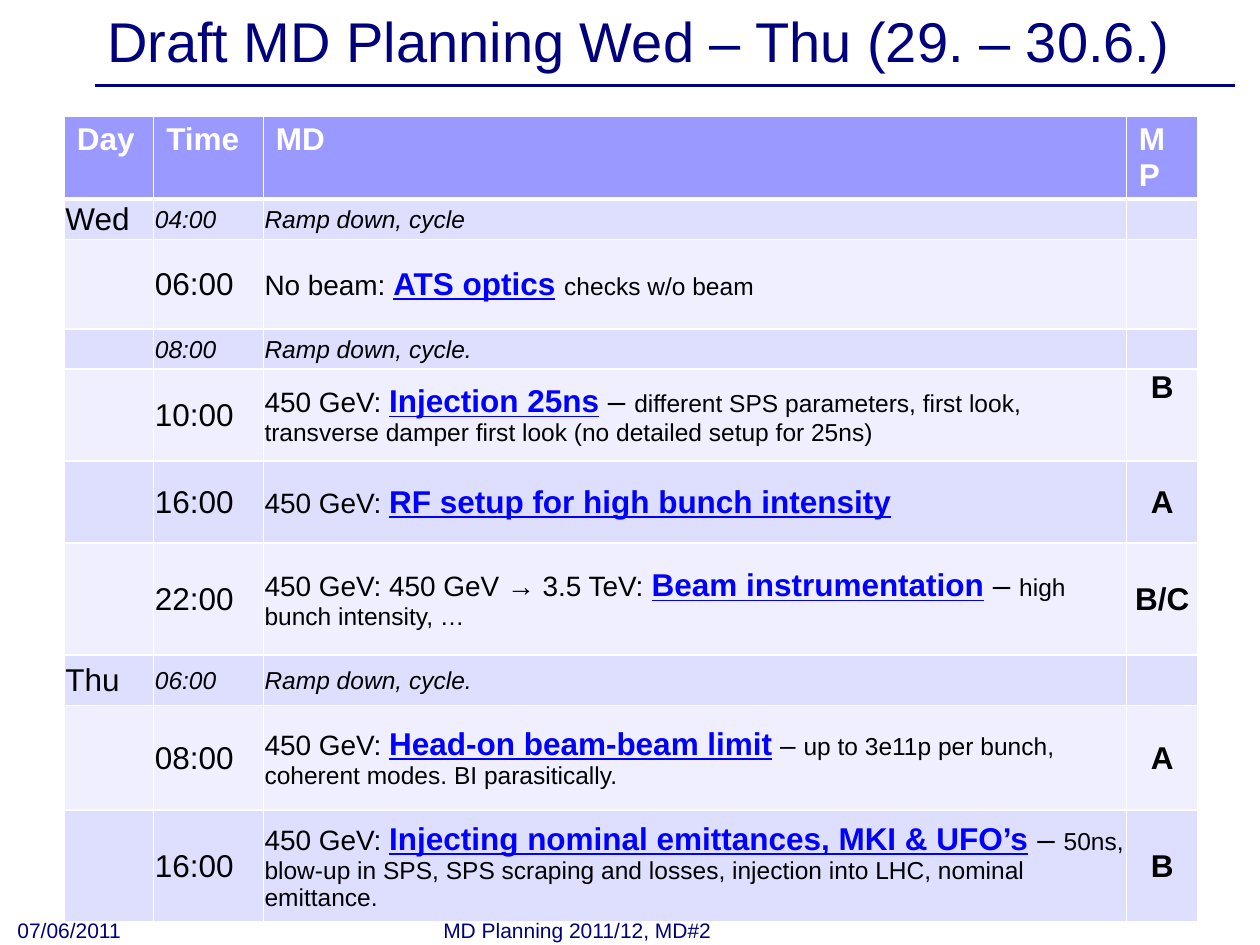
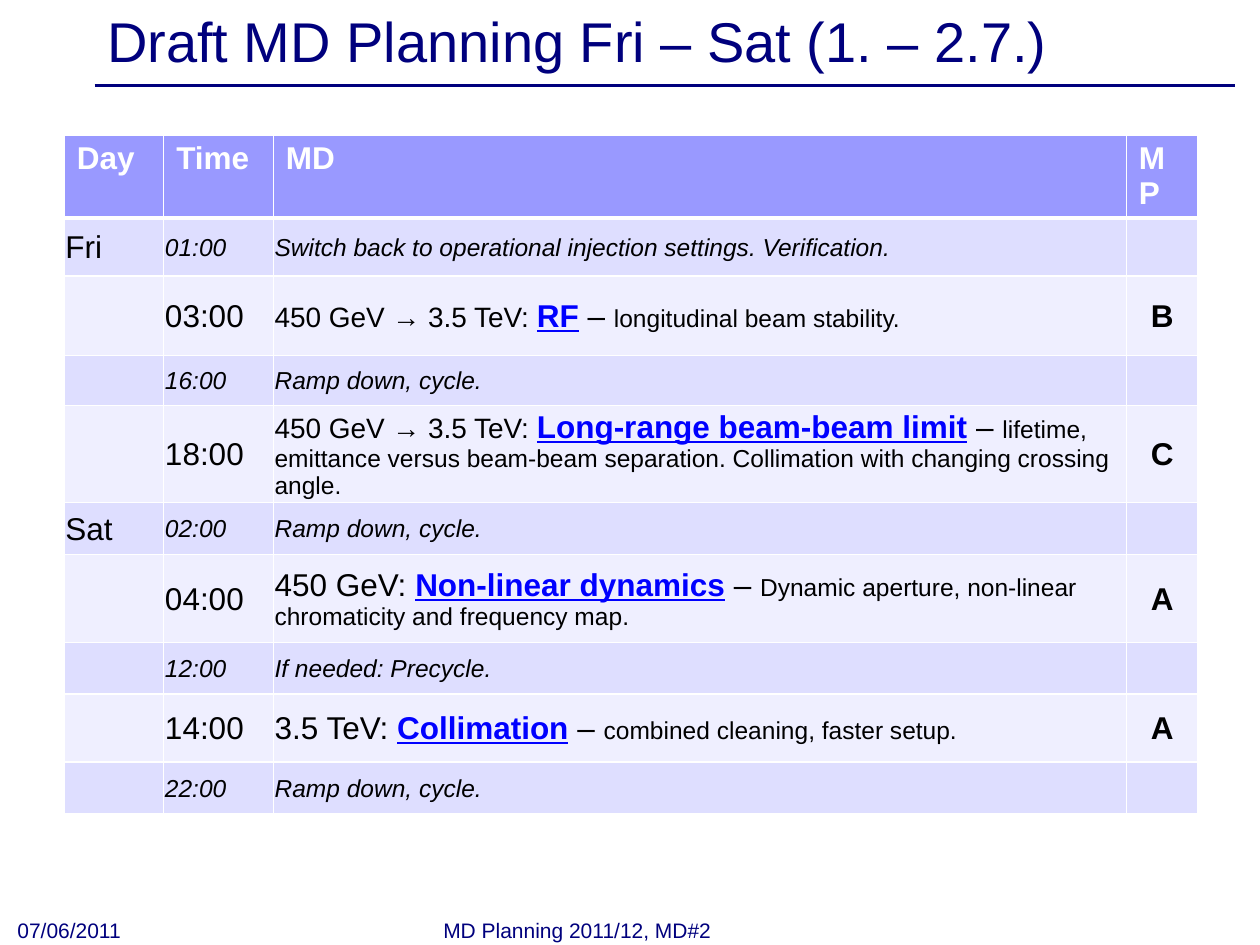
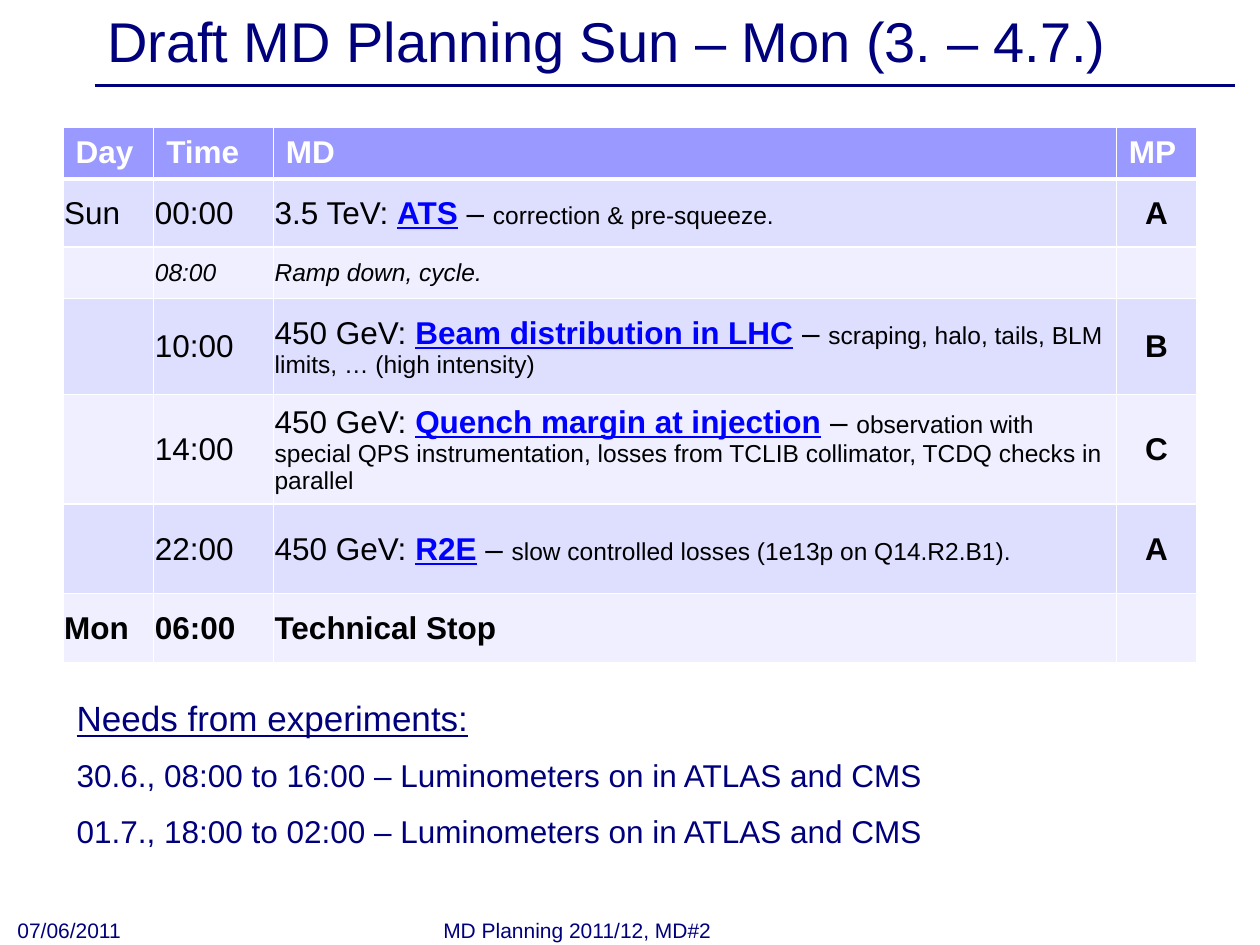
from dataclasses import dataclass
from typing import NamedTuple, Optional

from lxml import etree
from pptx import Presentation
from pptx import util as u
from pptx.dml.color import RGBColor
from pptx.enum import shapes, text
from pptx.oxml.ns import qn


@dataclass(frozen=True)
class Theme:
    font: str = "Arial"
    navy: str = "00007D"
    white: str = "FFFFFF"
    black: str = "000000"
    link: str = "0000FF"
    header: str = "9999FF"
    bands: tuple[str, str] = ("DEDEFF", "EFEFFF")
    title: int = 32
    heading: int = 20
    main: int = 18
    lead: int = 16
    detail: int = 14
    footer: int = 12


T = Theme()


class Run(NamedTuple):
    text: str
    size: int = T.main
    color: str = T.black
    bold: bool = False
    italic: bool = False
    underline: bool = False


@dataclass(frozen=True)
class Slot:
    """One row of the schedule."""
    height: float
    time: Run
    activity: tuple[Run, ...]
    mp: str = ""
    day: str = ""
    mp_anchor: text.MSO_ANCHOR = text.MSO_ANCHOR.MIDDLE
    bold_day: bool = False


@dataclass(frozen=True)
class Schedule:
    title: str
    left: float
    top: float
    columns: tuple[float, ...]
    header_height: float
    header_anchor: text.MSO_ANCHOR
    slots: tuple[Slot, ...]


def ramp(height: float, time: str, note: str = "Ramp down, cycle.", day: str = "") -> Slot:
    """A transition between studies, in small italics."""
    return Slot(height, Run(time, T.detail, italic=True),
                (Run(note, T.detail, italic=True),), day=day)


def study(height: float, time: str, lead: str, topic: str, detail: str = "", mp: str = "",
          day: str = "", lead_size: int = T.main, joint: str = " – ",
          joint_size: int = T.main,
          mp_anchor: text.MSO_ANCHOR = text.MSO_ANCHOR.MIDDLE) -> Slot:
    """A machine study: beam energy, underlined topic and details."""
    runs = (Run(lead, lead_size), Run(topic, color=T.link, bold=True, underline=True))
    if detail:
        runs += (Run(joint, joint_size), Run(detail, T.detail))
    return Slot(height, Run(time), runs, mp, day, mp_anchor)


SCHEDULES = (
    Schedule(
        "Draft MD Planning Wed – Thu (29. – 30.6.)", 0.51, 0.92,
        (0.71, 0.87, 6.85, 0.57), 0.42, text.MSO_ANCHOR.TOP,
        (
            ramp(0.32, "04:00", "Ramp down, cycle", day="Wed"),
            study(0.71, "06:00", "No beam: ", "ATS optics", "checks w/o beam",
                  lead_size=T.lead, joint=" "),
            ramp(0.32, "08:00"),
            study(0.73, "10:00", "450 GeV: ", "Injection 25ns",
                  "different SPS parameters, first look, transverse damper first look "
                  "(no detailed setup for 25ns)", "B",
                  lead_size=T.lead, mp_anchor=text.MSO_ANCHOR.TOP),
            study(0.65, "16:00", "450 GeV: ", "RF setup for high bunch intensity",
                  mp="A", lead_size=T.lead),
            study(0.89, "22:00", "450 GeV: 450 GeV → 3.5 TeV: ", "Beam instrumentation",
                  "high bunch intensity, …", "B/C", lead_size=T.lead),
            ramp(0.4, "06:00", day="Thu"),
            study(0.83, "08:00", "450 GeV: ", "Head-on beam-beam limit",
                  "up to 3e11p per bunch, coherent modes. BI parasitically.", "A",
                  lead_size=T.lead, joint_size=T.lead),
            study(0.89, "16:00", "450 GeV: ", "Injecting nominal emittances, MKI & UFO’s",
                  "50ns, blow-up in SPS, SPS scraping and losses, injection into LHC, "
                  "nominal emittance.", "B", lead_size=T.lead),
        )),
    Schedule(
        "Draft MD Planning Fri – Sat (1. – 2.7.)", 0.51, 1.07,
        (0.79, 0.87, 6.77, 0.57), 0.41, text.MSO_ANCHOR.TOP,
        (
            ramp(0.46, "01:00", "Switch back to operational injection settings. Verification.",
                 day="Fri"),
            study(0.63, "03:00", "450 GeV → 3.5 TeV: ", "RF",
                  "longitudinal beam stability.", "B", lead_size=T.lead),
            ramp(0.4, "16:00"),
            study(0.77, "18:00", "450 GeV → 3.5 TeV: ", "Long-range beam-beam limit",
                  "lifetime, emittance versus beam-beam separation. Collimation with "
                  "changing crossing angle.", "C", lead_size=T.lead),
            ramp(0.41, "02:00", day="Sat"),
            study(0.7, "04:00", "450 GeV: ", "Non-linear dynamics",
                  "Dynamic aperture, non-linear chromaticity and frequency map.", "A"),
            ramp(0.41, "12:00", "If needed: Precycle."),
            study(0.54, "14:00", "3.5 TeV: ", "Collimation",
                  "combined cleaning, faster setup.", "A"),
            ramp(0.41, "22:00"),
        )),
    Schedule(
        "Draft MD Planning Sun – Mon (3. – 4.7.)", 0.5, 1.01,
        (0.72, 0.95, 6.69, 0.64), 0.41, text.MSO_ANCHOR.MIDDLE,
        (
            study(0.54, "00:00", "3.5 TeV: ", "ATS", "correction & pre-squeeze.", "A",
                  day="Sun"),
            ramp(0.41, "08:00"),
            study(0.76, "10:00", "450 GeV: ", "Beam distribution in LHC",
                  "scraping, halo, tails, BLM limits, … (high intensity)", "B"),
            study(0.87, "14:00", "450 GeV: ", "Quench margin at injection",
                  "observation with special QPS instrumentation, losses from TCLIB "
                  "collimator, TCDQ checks in parallel", "C"),
            study(0.71, "22:00", "450 GeV: ", "R2E",
                  "slow controlled losses (1e13p on Q14.R2.B1).", "A"),
            Slot(0.55, Run("06:00", bold=True), (Run("Technical Stop", bold=True),),
                 day="Mon", bold_day=True),
        )),
)

NEEDS = (
    Run("Needs from experiments:", T.heading, T.navy, underline=True),
    Run("30.6., 08:00 to 16:00 – Luminometers on in ATLAS and CMS", color=T.navy),
    Run("01.7., 18:00 to 02:00 – Luminometers on in ATLAS and CMS", color=T.navy),
)


def write(p, *runs: Run) -> None:
    """Fill a paragraph; a lone run is formatted on the paragraph itself."""
    for run in runs:
        r = p.add_run()
        r.text = run.text
        font = p.font if len(runs) == 1 else r.font
        font.name, font.size = T.font, u.Pt(run.size)
        font.color.rgb = RGBColor.from_string(run.color)
        font.bold, font.italic, font.underline = run.bold, run.italic, run.underline


def add_title(s, title: str) -> None:
    sp = s.shapes.title
    sp.left, sp.top, sp.width, sp.height = map(u.Inches, (0.75, 0.03, 9, 0.57))
    tf = sp.text_frame
    tf.auto_size = text.MSO_AUTO_SIZE.NONE
    tf.vertical_anchor = text.MSO_ANCHOR.MIDDLE
    p = tf.paragraphs[0]
    p.alignment = text.PP_ALIGN.LEFT
    write(p, Run(title, T.title, T.navy))


def add_title_rule(s) -> None:
    y = u.Inches(0.68)
    line = s.shapes.add_connector(shapes.MSO_CONNECTOR.STRAIGHT,
                                  u.Inches(0.75), y, u.Inches(9.8), y)
    line.line.color.rgb = RGBColor.from_string(T.navy)
    line.line.width = u.Pt(2)
    etree.SubElement(line._element.spPr, qn("a:effectLst"))


def add_footer(s, label: str, left: float, top: float, width: float, height: float) -> None:
    tf = s.shapes.add_textbox(*map(u.Inches, (left, top, width, height))).text_frame
    tf.word_wrap = True
    tf.vertical_anchor = text.MSO_ANCHOR.BOTTOM
    write(tf.paragraphs[0], Run(label, T.footer, T.navy))


def set_borders(cell, top: int, bottom: int) -> None:
    tc_pr = cell._tc.get_or_add_tcPr()
    for side, points in (("lnL", 1), ("lnR", 1), ("lnT", top), ("lnB", bottom)):
        ln = etree.SubElement(tc_pr, qn(f"a:{side}"), w=str(u.Pt(points)))
        fill = etree.SubElement(ln, qn("a:solidFill"))
        etree.SubElement(fill, qn("a:srgbClr"), val=T.white)


def format_cell(cell, fill: str, runs: tuple[Run, ...], anchor: text.MSO_ANCHOR,
                top: int = 1, bottom: int = 1,
                alignment: Optional[text.PP_ALIGN] = None) -> None:
    set_borders(cell, top, bottom)
    cell.fill.solid()
    cell.fill.fore_color.rgb = RGBColor.from_string(fill)
    cell.vertical_anchor = anchor
    p = cell.text_frame.paragraphs[0]
    p.alignment = alignment
    write(p, *runs)


def add_schedule(s, plan: Schedule) -> None:
    heights = [plan.header_height] + [slot.height for slot in plan.slots]
    frame = s.shapes.add_table(len(heights), len(plan.columns),
                               u.Inches(plan.left), u.Inches(plan.top),
                               u.Inches(sum(plan.columns)), u.Inches(sum(heights)))
    table = frame.table
    for column, width in zip(table.columns, plan.columns):
        column.width = u.Inches(width)
    for row, height in zip(table.rows, heights):
        row.height = u.Inches(height)

    for cell, label in zip(table.rows[0].cells, ("Day", "Time", "MD", "MP")):
        format_cell(cell, T.header, (Run(label, color=T.white, bold=True),),
                    plan.header_anchor, bottom=3)

    for i, slot in enumerate(plan.slots):
        day = (Run(slot.day, bold=slot.bold_day),) if slot.day else ()
        mp = (Run(slot.mp, bold=True),) if slot.mp else ()
        contents = (day, (slot.time,), slot.activity, mp)
        for j, (cell, runs) in enumerate(zip(table.rows[i + 1].cells, contents)):
            is_mp = j == 3
            cell.margin_left = cell.margin_right = cell.margin_top = u.Inches(0.01)
            cell.margin_bottom = 0
            format_cell(cell, T.bands[i % 2], runs,
                        slot.mp_anchor if is_mp else text.MSO_ANCHOR.MIDDLE,
                        top=1 if i else 3,
                        alignment=text.PP_ALIGN.CENTER if is_mp else None)


def add_needs(s) -> None:
    box = s.shapes.add_textbox(*map(u.Inches, (0.51, 5.48, 6.98, 1.35)))
    tf = box.text_frame
    tf.word_wrap = False
    for i, run in enumerate(NEEDS):
        p = tf.add_paragraph() if i else tf.paragraphs[0]
        if i:
            p.space_before = u.Pt(10)
        write(p, run)


def main() -> None:
    prs = Presentation()
    prs.slide_width, prs.slide_height = u.Inches(10), u.Inches(7.5)
    title_only = prs.slide_layouts[5]
    for plan in SCHEDULES:
        s = prs.slides.add_slide(title_only)
        add_title_rule(s)
        add_title(s, plan.title)
        add_schedule(s, plan)
        add_footer(s, "MD Planning 2011/12, MD#2", 3.42, 7.25, 3.17, 0.28)
        add_footer(s, "07/06/2011", 0.04, 7.24, 2.33, 0.29)
    add_needs(s)
    prs.save("out.pptx")


if __name__ == "__main__":
    main()
